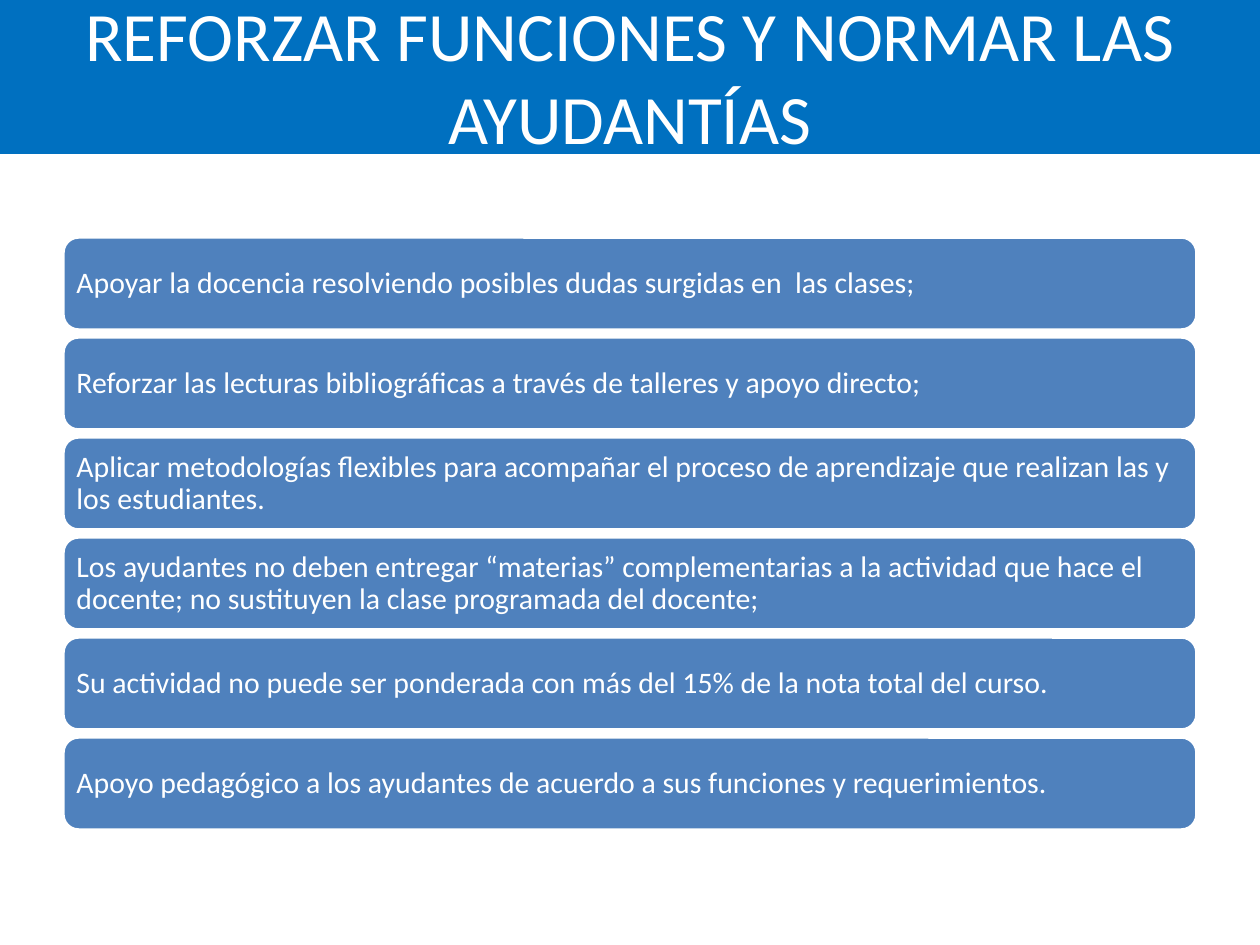
from pptx import Presentation
from pptx.dml.color import RGBColor
from pptx.enum.shapes import MSO_SHAPE
from pptx.enum.text import MSO_ANCHOR, MSO_AUTO_SIZE, PP_ALIGN
from pptx.util import Emu, Pt

PX = 914400 / 126
FONT = "Calibri"
WHITE = "FFFFFF"
TITLE = "REFORZAR FUNCIONES Y NORMAR LAS AYUDANTÍAS"
GUIDELINES = [
    "Apoyar la docencia resolviendo posibles dudas surgidas en  las clases;",
    "Reforzar las lecturas bibliográficas a través de talleres y apoyo directo;",
    "Aplicar metodologías flexibles para acompañar el proceso de aprendizaje "
    "que realizan las y los estudiantes.",
    "Los ayudantes no deben entregar “materias” complementarias a la actividad "
    "que hace el docente; no sustituyen la clase programada del docente;",
    "Su actividad no puede ser ponderada con más del 15% de la nota total del curso.",
    "Apoyo pedagógico a los ayudantes de acuerdo a sus funciones y requerimientos.",
]
BAR_LEFT, BAR_TOP, BAR_WIDTH, BAR_HEIGHT, BAR_PITCH = 63, 237, 1134, 93, 100


def px(n):
    return Emu(round(n * PX))


def color(hex_value):
    return RGBColor.from_string(hex_value)


def paint(sp, hex_value):
    sp.fill.solid()
    sp.fill.fore_color.rgb = color(hex_value)


def write(sp, text, size, align):
    """Set one wrapped, vertically centred white paragraph in a shape."""
    tf = sp.text_frame
    tf.word_wrap = True
    tf.auto_size = MSO_AUTO_SIZE.NONE
    tf.vertical_anchor = MSO_ANCHOR.MIDDLE
    p = tf.paragraphs[0]
    p.text = text
    p.alignment = align
    p.font.name = FONT
    p.font.size = Pt(size)
    p.font.color.rgb = color(WHITE)
    return tf


def add_title(s):
    sp = s.shapes.title
    sp.left, sp.top, sp.width, sp.height = px(0), px(-4), px(1260), px(158)
    paint(sp, "0070C0")
    write(sp, TITLE, 39.6, PP_ALIGN.CENTER)


def add_bar(s, top, text):
    sp = s.shapes.add_shape(MSO_SHAPE.ROUNDED_RECTANGLE, px(BAR_LEFT), px(top),
                            px(BAR_WIDTH), px(BAR_HEIGHT))
    sp.shadow.inherit = False
    paint(sp, "4F81BD")
    sp.line.color.rgb = color(WHITE)
    sp.line.width = Pt(2)
    tf = write(sp, text, 17, PP_ALIGN.LEFT)
    tf.margin_left = tf.margin_right = tf.margin_top = tf.margin_bottom = px(9)
    tf.paragraphs[0].line_spacing = 0.9


def main():
    prs = Presentation()
    prs.slide_width, prs.slide_height = px(1260), px(945)
    s = prs.slides.add_slide(prs.slide_layouts[5])
    add_title(s)
    for i, text in enumerate(GUIDELINES):
        add_bar(s, BAR_TOP + i * BAR_PITCH, text)
    prs.save("out.pptx")


if __name__ == "__main__":
    main()
